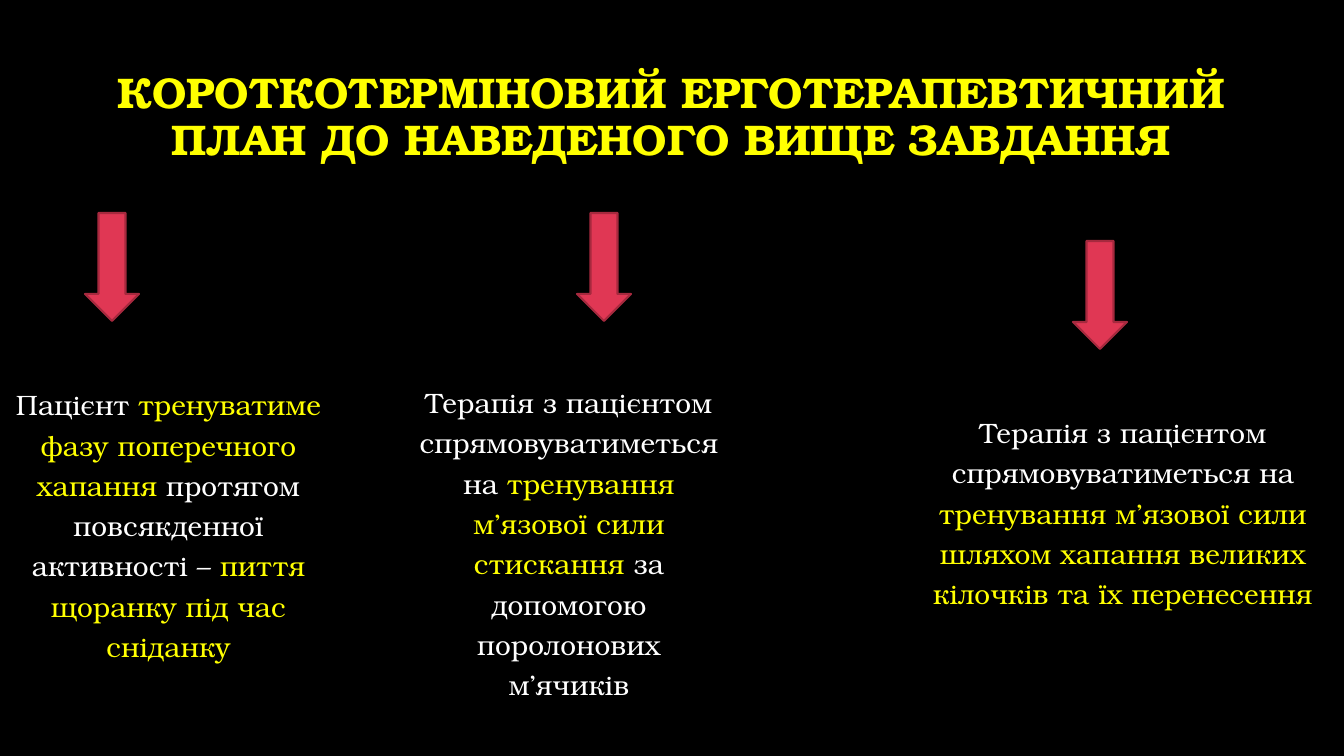
from pptx import Presentation
from pptx.dml.color import RGBColor
from pptx.enum.shapes import MSO_SHAPE as Shape
from pptx.enum.text import MSO_ANCHOR as Anchor, PP_ALIGN as Align
from pptx.util import Emu, Pt

BLACK = RGBColor(0x00, 0x00, 0x00)
WHITE = RGBColor(0xFF, 0xFF, 0xFF)
YELLOW = RGBColor(0xFF, 0xFF, 0x00)
RED = RGBColor(0xE0, 0x37, 0x54)
DARK_RED = RGBColor(0xA6, 0x29, 0x3E)
FONT = "TeX Gyre Bonum"

SLIDE_WIDTH, SLIDE_HEIGHT = 1344, 756
ARROW_WIDTH, ARROW_HEIGHT = 54, 108

TITLE = "КОРОТКОТЕРМІНОВИЙ ЕРГОТЕРАПЕВТИЧНИЙ ПЛАН ДО НАВЕДЕНОГО ВИЩЕ ЗАВДАННЯ"
TITLE_BOX = (101, 67, 1141, 146)

GOALS = [
    {
        "arrow": (85, 213),
        "box": (0, 376, 337, 363),
        "runs": [
            ("Пацієнт ", WHITE),
            ("тренуватиме фазу поперечного хапання ", YELLOW),
            ("протягом повсякденної активності – ", WHITE),
            ("пиття щоранку під час сніданку", YELLOW),
        ],
    },
    {
        "arrow": (577, 213),
        "box": (403, 374, 332, 382),
        "runs": [
            ("Терапія з пацієнтом спрямовуватиметься на ", WHITE),
            ("тренування м’язової сили стискання ", YELLOW),
            ("за допомогою поролонових м’ячиків", WHITE),
        ],
    },
    {
        "arrow": (1073, 241),
        "box": (923, 404, 400, 352),
        "runs": [
            ("Терапія з пацієнтом спрямовуватиметься на ", WHITE),
            ("тренування м’язової сили шляхом хапання великих кілочків та їх перенесення", YELLOW),
        ],
    },
]


def px(*lengths):
    return [Emu(round(length * 914400 / 100.8)) for length in lengths]


def add_text(slide, box, runs, size, bold=False, line_spacing=1.2, space_before=10):
    frame = slide.shapes.add_textbox(*px(*box)).text_frame
    frame.word_wrap = True
    frame.vertical_anchor = Anchor.TOP
    paragraph = frame.paragraphs[0]
    paragraph.alignment = Align.CENTER
    paragraph.line_spacing = line_spacing
    paragraph.space_before = Pt(space_before)
    for text, color in runs:
        run = paragraph.add_run()
        run.text = text
        run.font.name = FONT
        run.font.size = Pt(size)
        run.font.bold = bold
        run.font.color.rgb = color


def add_arrow(slide, left, top):
    arrow = slide.shapes.add_shape(
        Shape.DOWN_ARROW, *px(left, top, ARROW_WIDTH, ARROW_HEIGHT)
    )
    arrow.shadow.inherit = False
    arrow.fill.solid()
    arrow.fill.fore_color.rgb = RED
    arrow.line.color.rgb = DARK_RED
    arrow.line.width = Pt(1.5)


def main():
    presentation = Presentation()
    presentation.slide_width, presentation.slide_height = px(SLIDE_WIDTH, SLIDE_HEIGHT)
    slide = presentation.slides.add_slide(presentation.slide_layouts[6])
    slide.background.fill.solid()
    slide.background.fill.fore_color.rgb = BLACK

    add_text(slide, TITLE_BOX, [(TITLE, YELLOW)], size=30.6, bold=True,
             line_spacing=0.9, space_before=0)
    for goal in GOALS:
        add_text(slide, goal["box"], goal["runs"], size=20)
        add_arrow(slide, *goal["arrow"])

    presentation.save("out.pptx")


if __name__ == "__main__":
    main()
